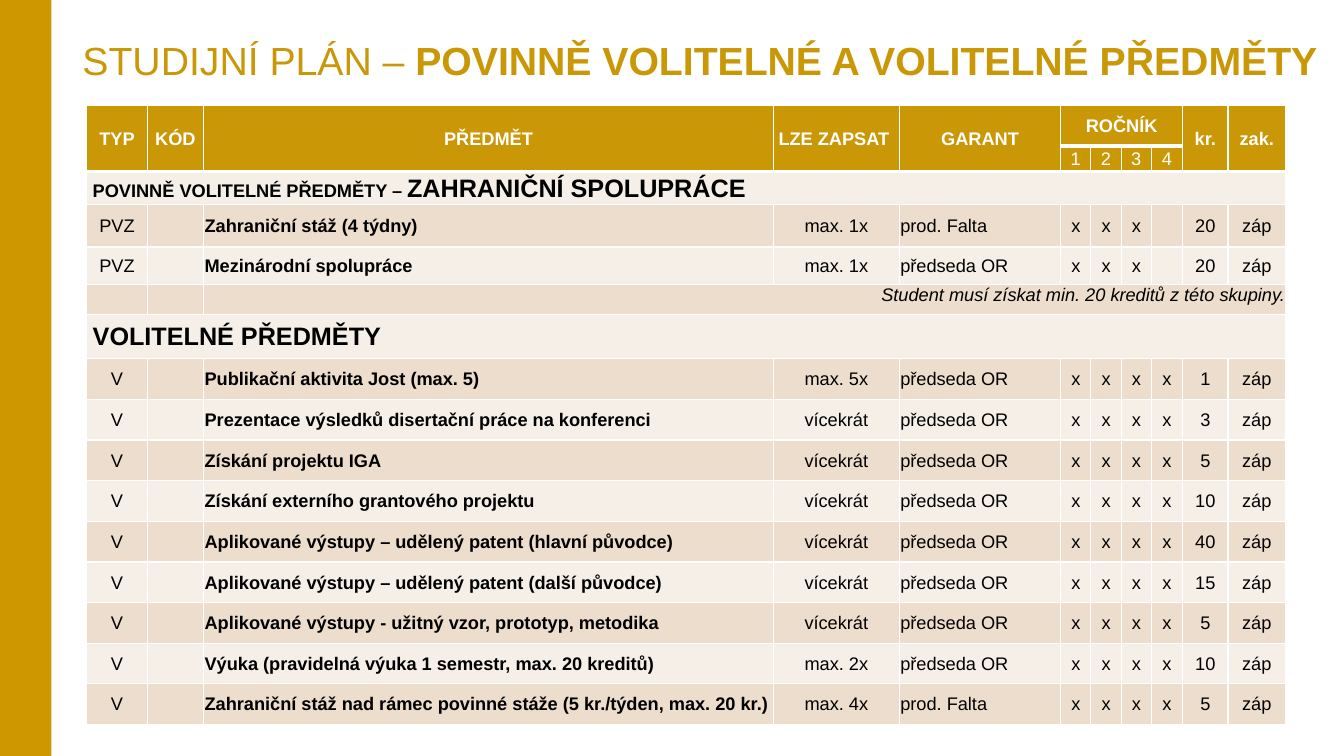
"""Build the study plan slide with its table of elective courses."""
from lxml.etree import SubElement
from pptx import Presentation
from pptx.dml.color import RGBColor
from pptx.enum.shapes import MSO_SHAPE as Shape
from pptx.enum.text import MSO_ANCHOR as Anchor, MSO_AUTO_SIZE as AutoSize, PP_ALIGN as Align
from pptx.oxml.ns import qn
from pptx.util import Inches, Pt

BAR_GOLD = RGBColor(0xCE, 0x97, 0x00)
GOLD = RGBColor(0xCA, 0x97, 0x06)
SAND = RGBColor(0xED, 0xDD, 0xCC)
CREAM = RGBColor(0xF6, 0xEF, 0xE7)
WHITE = RGBColor(0xFF, 0xFF, 0xFF)
BLACK = RGBColor(0x00, 0x00, 0x00)
FONT = "Arial"

COLUMNS = [0.6, 0.56, 5.65, 1.25, 1.6, 0.3, 0.3, 0.3, 0.31, 0.45, 0.57]
ROWS = [0.4, 0.25, 0.33, 0.42, 0.37, 0.3, 0.44] + [3.63 / 9] * 9
SUBJECT, GUARANTOR, FIRST_YEAR, LAST_YEAR, LAST = 2, 4, 5, 8, len(COLUMNS) - 1
HEADER_ROWS, GROUP_ROW, NOTE_ROW, ELECTIVE_ROW = 2, 2, 5, 6


def course(kind, subject, limit, guarantor, years, credits):
    """Return one table row, with a cross for each year of study."""
    crosses = ["x" if year < years else "" for year in range(4)]
    return [kind, "", subject, limit, guarantor, *crosses, credits, "záp"]


def add_span(para, text, size, bold):
    """Add a run with its own size and weight."""
    span = para.add_run()
    span.text = text
    span.font.size, span.font.bold = Pt(size), bold


CHAIR = "předseda OR"
ELECTIVES = [
    ("Publikační aktivita Jost (max. 5)", "max. 5x", CHAIR, "1"),
    ("Prezentace výsledků disertační práce na konferenci", "vícekrát", CHAIR, "3"),
    ("Získání projektu IGA", "vícekrát", CHAIR, "5"),
    ("Získání externího grantového projektu", "vícekrát", CHAIR, "10"),
    ("Aplikované výstupy – udělený patent (hlavní původce)", "vícekrát", CHAIR, "40"),
    ("Aplikované výstupy – udělený patent (další původce)", "vícekrát", CHAIR, "15"),
    ("Aplikované výstupy - užitný vzor, prototyp, metodika", "vícekrát", CHAIR, "5"),
    ("Výuka (pravidelná výuka 1 semestr, max. 20 kreditů)", "max. 2x", CHAIR, "10"),
    ("Zahraniční stáž nad rámec povinné stáže (5 kr./týden, max. 20 kr.)",
     "max. 4x", "prod. Falta", "5"),
]
CONTENT = [
    ["TYP", "KÓD", "PŘEDMĚT", "LZE ZAPSAT ", "GARANT", "ROČNÍK", "", "", "", "kr.", "zak."],
    [""] * FIRST_YEAR + ["1", "2", "3", "4", "", ""],
    [""] * len(COLUMNS),
    course("PVZ", "Zahraniční stáž (4 týdny)", "max. 1x", "prod. Falta", 3, "20"),
    course("PVZ", "Mezinárodní spolupráce", "max. 1x", CHAIR, 3, "20"),
    ["", "", "Student musí získat min. 20 kreditů z této skupiny."] + [""] * 8,
    [""] * len(COLUMNS),
] + [course("V", subject, limit, guarantor, 4, credits)
     for subject, limit, guarantor, credits in ELECTIVES]
HEADINGS = {
    GROUP_ROW: [(" POVINNĚ VOLITELNÉ PŘEDMĚTY – ", 13), ("ZAHRANIČNÍ SPOLUPRÁCE", 18)],
    ELECTIVE_ROW: [(" ", 13), ("VOLITELNÉ PŘEDMĚTY", 18)],
}

deck = Presentation()
deck.slide_width, deck.slide_height = Inches(13.33), Inches(7.5)
page = deck.slides.add_slide(deck.slide_layouts[6])

bar = page.shapes.add_shape(Shape.RECTANGLE, 0, 0, Inches(0.51), deck.slide_height)
bar.shadow.inherit = False
bar.fill.solid()
bar.fill.fore_color.rgb = BAR_GOLD
bar.line.fill.background()

title = page.shapes.add_textbox(Inches(0.72), Inches(0.31), Inches(12.83), Inches(0.57))
title.text_frame.word_wrap = True
title.text_frame.auto_size = AutoSize.SHAPE_TO_FIT_TEXT
para = title.text_frame.paragraphs[0]
para.font.name, para.font.color.rgb = FONT, GOLD
add_span(para, "STUDIJNÍ PLÁN – ", 28, False)
add_span(para, "POVINNĚ VOLITELNÉ A VOLITELNÉ PŘEDMĚTY", 28, True)

frame = page.shapes.add_table(len(ROWS), len(COLUMNS), Inches(0.86), Inches(1.05),
                              Inches(sum(COLUMNS)), Inches(sum(ROWS)))
table = frame.table
table.first_row = table.horz_banding = False
for column, width in zip(table.columns, COLUMNS):
    column.width = Inches(width)
for row, height in zip(table.rows, ROWS):
    row.height = Inches(height)

for r, texts in enumerate(CONTENT):
    for c, text in enumerate(texts):
        cell = table.cell(r, c)
        cell.margin_left = cell.margin_right = cell.margin_top = Inches(0.01)
        cell.margin_bottom = 0
        cell.vertical_anchor = Anchor.TOP if r == NOTE_ROW else Anchor.MIDDLE
        for side in ("lnL", "lnR", "lnT", "lnB"):
            weight = 3 if r == 0 and side == "lnB" else 1
            edge = SubElement(cell._tc.get_or_add_tcPr(), qn("a:" + side), w=str(Pt(weight)))
            paint = SubElement(edge, qn("a:solidFill"))
            SubElement(paint, qn("a:srgbClr"), val=str(WHITE))
        cell.fill.solid()
        cell.fill.fore_color.rgb = GOLD if r < HEADER_ROWS else SAND if r % 2 else CREAM

        para = cell.text_frame.paragraphs[0]
        para.font.name, para.font.size = FONT, Pt(13)
        para.font.color.rgb = WHITE if r < HEADER_ROWS else BLACK
        para.font.bold = r == 0 or (c == SUBJECT and r != NOTE_ROW)
        para.font.italic = r == NOTE_ROW
        if r == NOTE_ROW:
            para.alignment = Align.RIGHT
        elif r in HEADINGS or (r >= HEADER_ROWS and c in (SUBJECT, GUARANTOR)):
            para.alignment = Align.LEFT
        else:
            para.alignment = Align.CENTER
        if text:
            para.add_run().text = text

for r, parts in HEADINGS.items():
    for text, size in parts:
        add_span(table.cell(r, 0).text_frame.paragraphs[0], text, size, True)
    table.cell(r, 0).merge(table.cell(r, LAST))
table.cell(NOTE_ROW, SUBJECT).merge(table.cell(NOTE_ROW, LAST))
table.cell(0, FIRST_YEAR).merge(table.cell(0, LAST_YEAR))
for c in [*range(FIRST_YEAR), *range(LAST_YEAR + 1, LAST + 1)]:
    table.cell(0, c).merge(table.cell(1, c))

deck.save("out.pptx")
